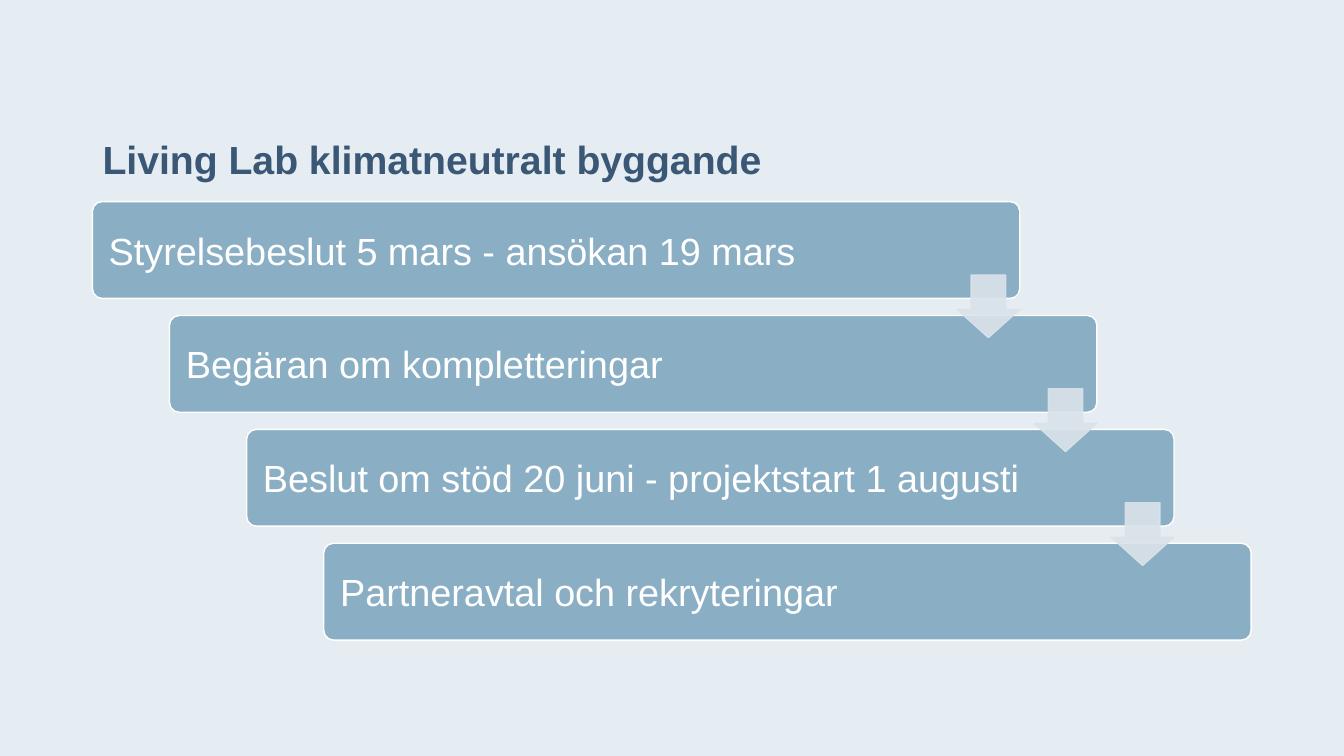
from lxml import etree
from pptx import Presentation
from pptx.dml.color import RGBColor
from pptx.enum import shapes, text
from pptx.oxml.ns import qn
from pptx.util import Cm, Pt

STEPS = [
    "Styrelsebeslut 5 mars - ansökan 19 mars",
    "Begäran om kompletteringar",
    "Beslut om stöd 20 juni - projektstart 1 augusti",
    "Partneravtal och rekryteringar",
]


def rgb(value):
    return RGBColor.from_string(value)


def set_attrs(obj, **values):
    for name, value in values.items():
        setattr(obj, name, value)


def write(tf, wording, size, color, bold=False):
    p = tf.paragraphs[0]
    p.alignment = text.PP_ALIGN.LEFT
    r = p.add_run()
    r.text = wording
    set_attrs(r.font, name="Arial", size=Pt(size), bold=bold)
    r.font.color.rgb = rgb(color)
    return p


def add_title(s, wording, x, y, w, h):
    sp = s.shapes.title
    set_attrs(sp, left=Cm(x), top=Cm(y), width=Cm(w), height=Cm(h))
    set_attrs(sp.text_frame, word_wrap=True, auto_size=text.MSO_AUTO_SIZE.NONE,
              vertical_anchor=text.MSO_ANCHOR.BOTTOM)
    p = write(sp.text_frame, wording, 28, "3A5776", bold=True)
    p.line_spacing = Pt(31)


def add_block(s, kind, box, adjustments, fill, line):
    sp = s.shapes.add_shape(kind, *map(Cm, box))
    sp.shadow.inherit = False
    for i, value in enumerate(adjustments):
        sp.adjustments[i] = value
    sp.fill.solid()
    sp.fill.fore_color.rgb = rgb(fill)
    sp.line.color.rgb = rgb(line)
    sp.line.width = Pt(1)
    return sp


def add_step(s, wording, box):
    sp = add_block(s, shapes.MSO_SHAPE.ROUNDED_RECTANGLE, box, [0.1], "8AAEC4", "FFFFFF")
    set_attrs(sp.text_frame, word_wrap=True, vertical_anchor=text.MSO_ANCHOR.MIDDLE,
              margin_left=Cm(0.34), margin_right=Cm(0.34))
    write(sp.text_frame, wording, 27, "FFFFFF")


def add_arrow(s, box):
    sp = add_block(s, shapes.MSO_SHAPE.DOWN_ARROW, box, [0.55, 0.45], "DAE3EA", "DAE3EA")
    for color in sp._element.spPr.iter(qn("a:srgbClr")):
        etree.SubElement(color, qn("a:alpha"), val="90000")


def add_staircase(s, steps, x, y, w, h):
    """Steps fill the box diagonally, with an arrow from each to the next."""
    step_w, step_h, arrow = 23.37, 2.44, 1.58
    dx = (w - step_w) / (len(steps) - 1)
    dy = (h - step_h) / (len(steps) - 1)
    for i, wording in enumerate(steps):
        add_step(s, wording, (x + i * dx, y + i * dy, step_w, step_h))
    for i in range(len(steps) - 1):
        add_arrow(s, (x + i * dx + step_w - arrow, y + i * dy + 1.85, arrow, arrow))


def main():
    prs = Presentation()
    set_attrs(prs, slide_width=Cm(33.87), slide_height=Cm(19.05))
    s = prs.slides.add_slide(prs.slide_layouts[5])
    s.background.fill.solid()
    s.background.fill.fore_color.rgb = rgb("E5EDF2")
    add_title(s, "Living Lab klimatneutralt byggande", 2.33, 1.04, 29.2, 3.68)
    add_staircase(s, STEPS, 2.33, 5.08, 29.2, 11.05)
    prs.save("out.pptx")


if __name__ == "__main__":
    main()
